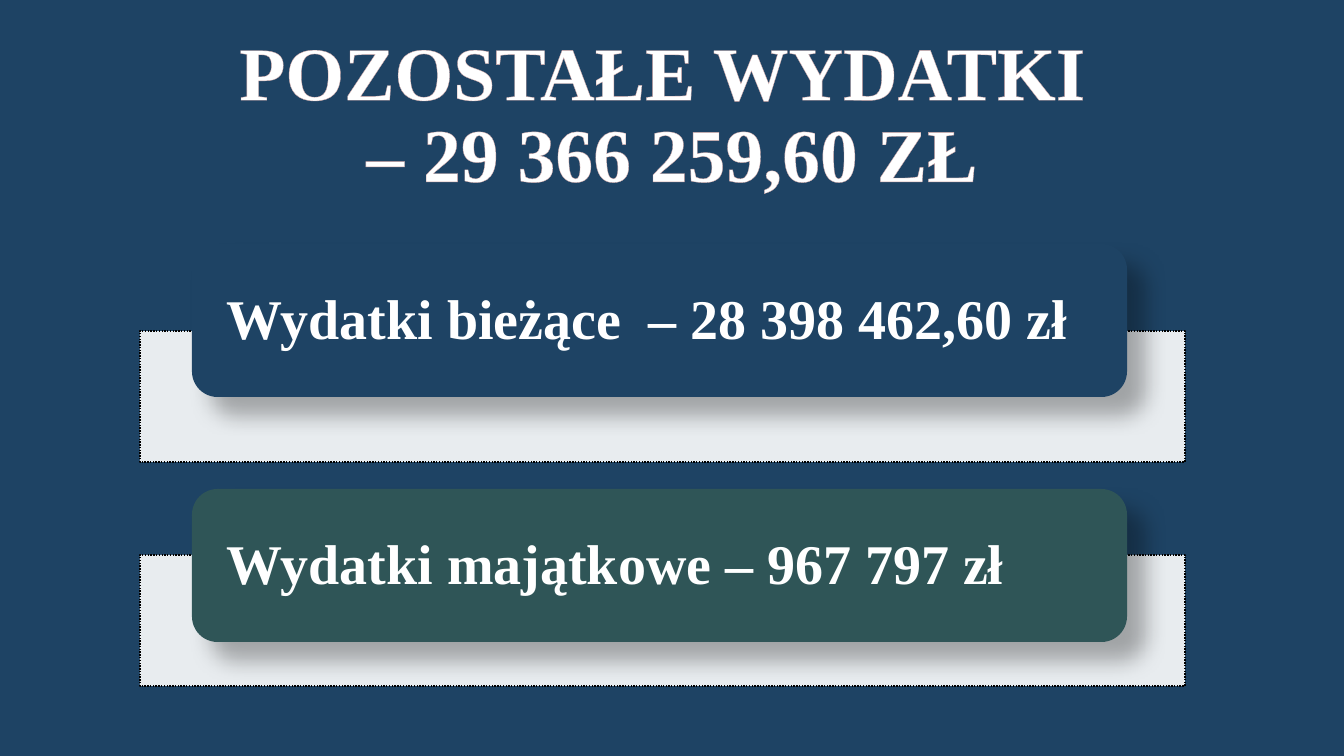
from lxml.etree import SubElement
from pptx import Presentation
from pptx.dml.color import RGBColor
from pptx.enum.dml import MSO_LINE
from pptx.enum.shapes import MSO_SHAPE
from pptx.enum.text import MSO_ANCHOR, PP_ALIGN
from pptx.oxml.ns import qn
from pptx.util import Pt

NAVY = RGBColor(0x1E, 0x43, 0x64)
GREEN = RGBColor(0x2F, 0x55, 0x57)
WHITE = RGBColor(0xFF, 0xFF, 0xFF)
BLACK = RGBColor(0x00, 0x00, 0x00)
ROSE = RGBColor(0xCA, 0xA2, 0xA2)

SLIDE_WIDTH, SLIDE_HEIGHT = 1344, 756
EMU_PER_PX = 12192000 / SLIDE_WIDTH


def px(length):
    return round(length * EMU_PER_PX)


def add_color(parent, color, opacity=100):
    value = SubElement(parent, qn("a:srgbClr"), val=str(color))
    SubElement(value, qn("a:alpha"), val=str(opacity * 1000))


class SlideBuilder:
    font = "Times New Roman"

    def __init__(self, presentation):
        self.slide = presentation.slides.add_slide(presentation.slide_layouts[6])
        fill = self.slide.background.fill
        fill.solid()
        fill.fore_color.rgb = NAVY

    def block(self, preset, box, color):
        shape = self.slide.shapes.add_shape(preset, *map(px, box))
        shape.shadow.inherit = False
        shape.fill.solid()
        shape.fill.fore_color.rgb = color
        return shape

    def panel(self, *box):
        """Add a slightly see-through white strip with a dotted edge."""
        panel = self.block(MSO_SHAPE.RECTANGLE, box, WHITE)
        color = panel.fill._xPr.find(qn("a:solidFill"))[0]
        SubElement(color, qn("a:alpha"), val="90000")
        panel.line.color.rgb = BLACK
        panel.line.width = Pt(1)
        panel.line.dash_style = MSO_LINE.ROUND_DOT

    def card(self, *box, color):
        """Add a rounded card that casts a soft shadow down and right."""
        card = self.block(MSO_SHAPE.ROUNDED_RECTANGLE, box, color)
        card.line.fill.background()
        effects = card._element.spPr.find(qn("a:effectLst"))
        shadow = SubElement(effects, qn("a:outerShdw"), blurRad=str(Pt(15)),
                            dist=str(Pt(18)), dir=str(45 * 60000),
                            algn="tl", rotWithShape="0")
        add_color(shadow, BLACK, 30)

    def text(self, *box, words, size, frame_format, paragraph_format):
        area = self.slide.shapes.add_textbox(*map(px, box))
        frame = area.text_frame
        paragraph = frame.paragraphs[0]
        paragraph.text = words
        for name, value in frame_format.items():
            setattr(frame, name, value)
        for name, value in paragraph_format.items():
            setattr(paragraph, name, value)
        for run in paragraph.runs:
            for name, value in {"name": self.font, "size": Pt(size), "bold": True}.items():
                setattr(run.font, name, value)
            run.font.color.rgb = WHITE
        return paragraph

    def label(self, *box, words):
        self.text(*box, words=words, size=40,
                  frame_format={"word_wrap": True, "vertical_anchor": MSO_ANCHOR.MIDDLE,
                                "margin_left": px(27), "margin_right": px(27),
                                "margin_top": 0, "margin_bottom": 0},
                  paragraph_format={"line_spacing": 0.9})

    def title(self, *box, words):
        paragraph = self.text(*box, words=words, size=54,
                              frame_format={"word_wrap": True},
                              paragraph_format={"line_spacing": 0.9, "space_before": Pt(10),
                                                "alignment": PP_ALIGN.CENTER})
        for run in paragraph.runs:
            properties = run.font._element
            outline = SubElement(properties, qn("a:ln"), w=str(Pt(0.8)))
            add_color(SubElement(outline, qn("a:solidFill")), ROSE)
            properties.insert(0, outline)


def main():
    presentation = Presentation()
    presentation.slide_width = px(SLIDE_WIDTH)
    presentation.slide_height = px(SLIDE_HEIGHT)
    builder = SlideBuilder(presentation)

    expenses = [
        ("Wydatki bieżące  – 28 398 462,60 zł", NAVY, 331, 244),
        ("Wydatki majątkowe – 967 797 zł", GREEN, 555, 489),
    ]
    for words, color, panel_top, card_top in expenses:
        builder.panel(140, panel_top, 1045, 131)
        builder.card(192, card_top, 935, 153, color=color)
        builder.label(200, card_top + 8, 919, 138, words=words)

    builder.title(-8, 30, 1360, 107, words="POZOSTAŁE WYDATKI \v– 29 366 259,60 ZŁ")
    presentation.save("out.pptx")


if __name__ == "__main__":
    main()
